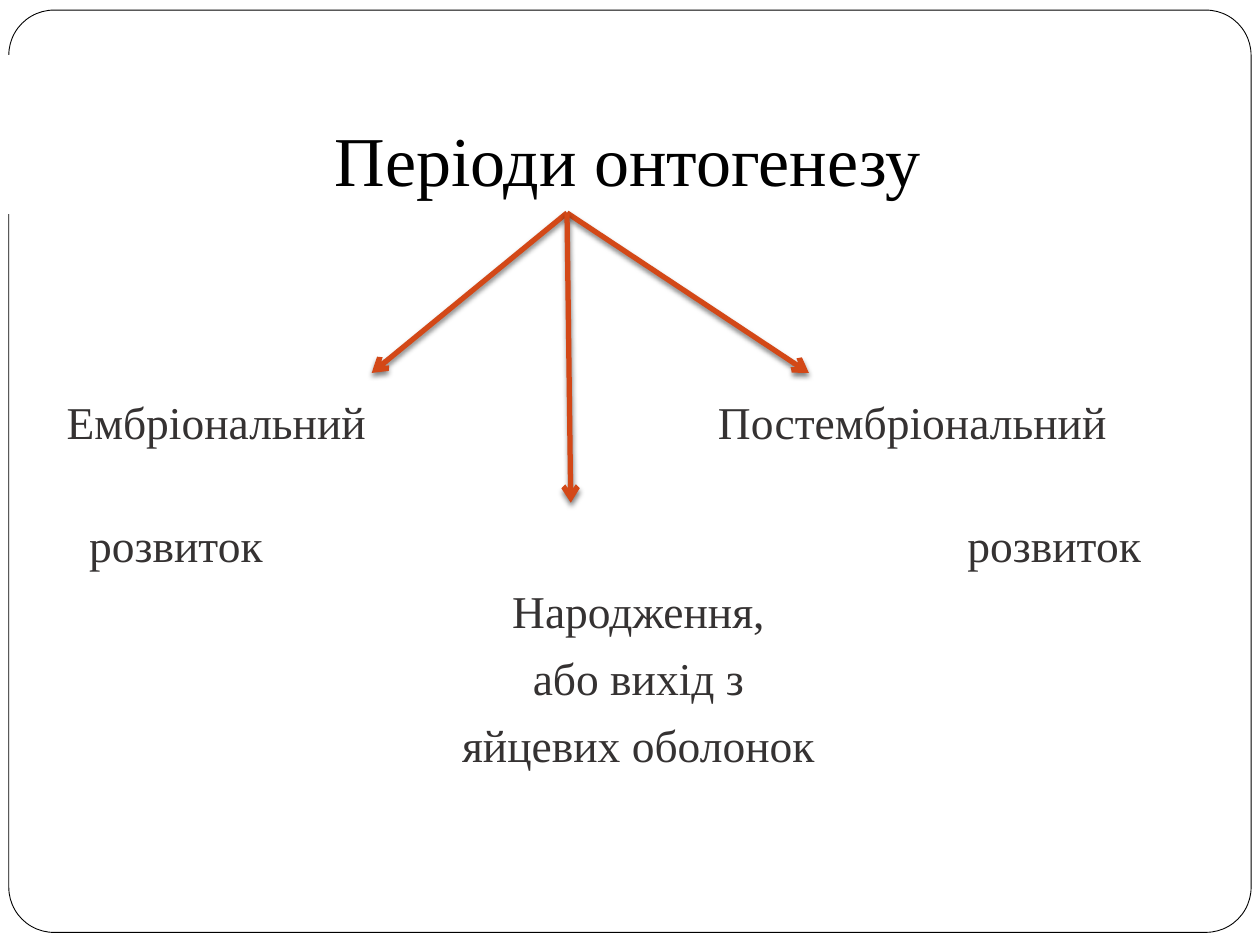
from dataclasses import dataclass

from lxml import etree
from pptx import Presentation
from pptx.dml.color import RGBColor
from pptx.enum.shapes import MSO_CONNECTOR, MSO_SHAPE
from pptx.enum.text import MSO_ANCHOR, PP_ALIGN
from pptx.oxml import parse_xml
from pptx.oxml.ns import qn
from pptx.util import Inches, Pt

STRAIGHT = MSO_CONNECTOR.STRAIGHT
RECTANGLE, ROUNDED = MSO_SHAPE.RECTANGLE, MSO_SHAPE.ROUNDED_RECTANGLE
TOP, BOTTOM = MSO_ANCHOR.TOP, MSO_ANCHOR.BOTTOM
LEFT, CENTER = PP_ALIGN.LEFT, PP_ALIGN.CENTER
NAMESPACE = "http://schemas.openxmlformats.org/drawingml/2006/main"


@dataclass(frozen=True)
class Theme:
    font: str = "Times New Roman"
    white: str = "FFFFFF"
    black: str = "000000"
    body: str = "353232"
    arrow: str = "D34817"
    title_size: float = 40
    body_size: float = 26
    line_gap: float = 7
    row_gap: float = 38.7


THEME = Theme()
WIDTH, HEIGHT = 10, 7.5
FRAME = (0.07, 0.08, 9.86, 7.32)
TITLE_AREA = (0, 0.44, 9, 1.25)
BODY_AREA = (0.43, 2.02, 9, 4.8)

TITLE = "Періоди онтогенезу"
MIDDLE = [(4.54, "ctr")]
BODY_LINES = [
    ("Ембріональний\tПостембріональний", [(5.17, "l")], 0),
    ("\tрозвиток\tрозвиток", [(0.18, "l"), (7.15, "l")], THEME.row_gap),
    ("\tНародження,", MIDDLE, THEME.line_gap),
    ("\tабо вихід з", MIDDLE, THEME.line_gap),
    ("\tяйцевих оболонок", MIDDLE, THEME.line_gap),
]
ARROW_START = (TITLE_AREA[2] / 2, TITLE_AREA[1] + TITLE_AREA[3])
ARROW_ENDS = [(2.95, 2.96), (6.42, 2.96), (4.53, 3.99)]

SHADOW = (
    f'<a:effectLst xmlns:a="{NAMESPACE}">'
    '<a:outerShdw blurRad="38100" dist="25400" dir="5400000" rotWithShape="0">'
    f'<a:srgbClr val="{THEME.black}"><a:alpha val="50000"/></a:srgbClr>'
    "</a:outerShdw></a:effectLst>"
)


def add_panel(page, preset, area, line_color, line_width):
    panel = page.shapes.add_shape(preset, *map(Inches, area))
    panel.shadow.inherit = False
    panel.fill.solid()
    panel.fill.fore_color.rgb = RGBColor.from_string(THEME.white)
    panel.line.color.rgb = RGBColor.from_string(line_color)
    panel.line.width = Pt(line_width)
    return panel


def set_tabs(para, stops):
    tab_list = etree.SubElement(para._p.get_or_add_pPr(), qn("a:tabLst"))
    for position, kind in stops:
        etree.SubElement(tab_list, qn("a:tab"), pos=str(Inches(position)), algn=kind)


def write_lines(box, lines, *, size, color, align, anchor, margins):
    frame = box.text_frame
    frame.word_wrap = True
    frame.vertical_anchor = anchor
    (frame.margin_left, frame.margin_top,
     frame.margin_right, frame.margin_bottom) = map(Inches, margins)
    for index, (text, stops, gap) in enumerate(lines):
        para = frame.add_paragraph() if index else frame.paragraphs[0]
        para.alignment = align
        para.space_before = Pt(gap)
        if stops:
            set_tabs(para, stops)
        span = para.add_run()
        span.text = text
        span.font.name = THEME.font
        span.font.size = Pt(size)
        span.font.color.rgb = RGBColor.from_string(color)


def add_arrow(page, start, end):
    arrow = page.shapes.add_connector(STRAIGHT, *map(Inches, start + end))
    arrow.line.color.rgb = RGBColor.from_string(THEME.arrow)
    arrow.line.width = Pt(3)
    etree.SubElement(arrow.line._get_or_add_ln(), qn("a:tailEnd"), type="arrow")
    arrow._element.spPr.append(parse_xml(SHADOW))


def main():
    deck = Presentation()
    deck.slide_width, deck.slide_height = Inches(WIDTH), Inches(HEIGHT)
    page = deck.slides.add_slide(deck.slide_layouts[6])

    border = add_panel(page, ROUNDED, FRAME, THEME.black, 0.5)
    border.adjustments[0] = 0.049

    body = page.shapes.add_textbox(*map(Inches, BODY_AREA))
    write_lines(body, BODY_LINES, size=THEME.body_size, color=THEME.body,
                align=LEFT, anchor=TOP, margins=(0.1, 1.11, 0.1, 0.05))

    title = add_panel(page, RECTANGLE, TITLE_AREA, THEME.white, 1)
    write_lines(title, [(TITLE, [], 0)], size=THEME.title_size, color=THEME.black,
                align=CENTER, anchor=BOTTOM, margins=(1.06, 0.05, 0.1, 0.1))

    for end in ARROW_ENDS:
        add_arrow(page, ARROW_START, end)
    deck.save("out.pptx")


if __name__ == "__main__":
    main()
